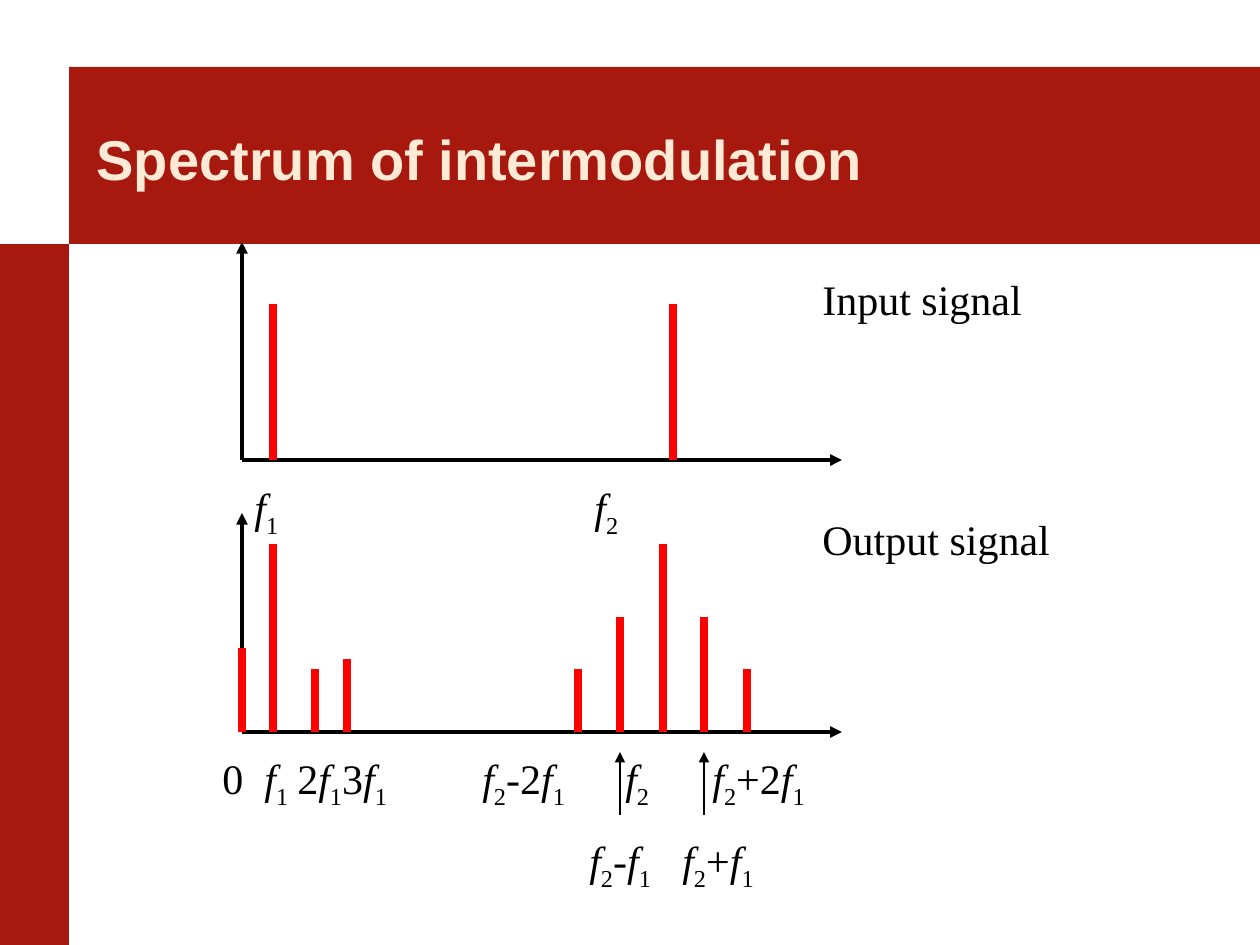
from itertools import groupby
from typing import NamedTuple

from lxml.etree import SubElement
from pptx import Presentation
from pptx.dml.color import RGBColor
from pptx.enum.shapes import MSO_CONNECTOR, MSO_SHAPE
from pptx.enum.text import MSO_ANCHOR, PP_ALIGN
from pptx.oxml.ns import qn
from pptx.util import Emu, Pt

PX_PER_INCH = 126
BAND, CREAM, BLACK, RED = "A7190E", "FFEBD5", "000000", "FF0000"
AXIS_X, AXIS_END = 242, 842


class Box(NamedTuple):
    left: int
    top: int
    width: int
    height: int


class Line(NamedTuple):
    text: str
    tabs: tuple[int, ...] = ()  # distances from the left of the text


class Label(NamedTuple):
    box: Box
    lines: tuple[Line, ...]


class Spectrum(NamedTuple):
    top: int
    base: int
    bars: dict[int, int]  # x position to top of the bar


BANDS = [Box(69, 67, 1191, 177), Box(0, 244, 69, 701)]

SPECTRA = [
    Spectrum(242, 460, {273: 304, 673: 304}),
    Spectrum(513, 732, {242: 648, 273: 544, 315: 669, 347: 659, 578: 669,
                        620: 617, 663: 544, 704: 617, 747: 669}),
]

# An underscore lowers the character that follows it
LABELS = [
    Label(Box(242, 471, 537, 63), (Line("f_1\tf_2", (340,)),)),
    Label(Box(210, 742, 694, 139), (
        Line("0\tf_1\t2f_13f_1\tf_2-2f_1\tf_2\tf_2+2f_1", (42, 75, 260, 403, 490)),
        Line("\tf_2-f_1\tf_2+f_1", (367, 460)),
    )),
    Label(Box(810, 262, 326, 64), (Line("Input signal"),)),
    Label(Box(810, 503, 326, 64), (Line("Output signal"),)),
]


def px(length: int) -> Emu:
    return Emu(round(length * 914400 / PX_PER_INCH))


def color(value: str) -> RGBColor:
    return RGBColor.from_string(value)


def draw_band(slide, box: Box) -> None:
    shape = slide.shapes.add_shape(MSO_SHAPE.RECTANGLE, *map(px, box))
    shape.shadow.inherit = False
    shape.fill.solid()
    shape.fill.fore_color.rgb = color(BAND)
    shape.line.fill.background()


def draw_line(slide, start: tuple[int, int], end: tuple[int, int],
              stroke: str, width: float, arrow: bool = False) -> None:
    connector = slide.shapes.add_connector(
        MSO_CONNECTOR.STRAIGHT, *map(px, (*start, *end)))
    connector.line.color.rgb = color(stroke)
    connector.line.width = Pt(width)
    if arrow:
        SubElement(connector.line._get_or_add_ln(), qn("a:tailEnd"), type="triangle")
    SubElement(connector._element.spPr, qn("a:effectLst"))


def draw_spectrum(slide, spectrum: Spectrum) -> None:
    origin = (AXIS_X, spectrum.base)
    draw_line(slide, origin, (AXIS_X, spectrum.top), BLACK, 2.25, arrow=True)
    draw_line(slide, origin, (AXIS_END, spectrum.base), BLACK, 2.25, arrow=True)
    for x, top in spectrum.bars.items():
        draw_line(slide, (x, top), (x, spectrum.base), RED, 4.5)


def add_formula(paragraph, text: str) -> None:
    """Write f in italics and lowered characters as subscripts."""
    styled = [(char, "sub" if before == "_" else "italic" if char == "f" else "plain")
              for before, char in zip(" " + text, text) if char != "_"]
    for style, pairs in groupby(styled, key=lambda pair: pair[1]):
        run = paragraph.add_run()
        run.text = "".join(char for char, _ in pairs)
        run.font.name = "Times New Roman"
        run.font.size = Pt(24)
        run.font.italic = style == "italic"
        run.font.color.rgb = color(BLACK)
        if style == "sub":
            run.font._element.set("baseline", "-25000")


def draw_label(slide, label: Label) -> None:
    frame = slide.shapes.add_textbox(*map(px, label.box)).text_frame
    frame.word_wrap = True
    frame.margin_top = px(11)
    for index, line in enumerate(label.lines):
        paragraph = frame.add_paragraph() if index else frame.paragraphs[0]
        if index:
            paragraph.space_before = Pt(14)
        if line.tabs:
            tab_list = SubElement(paragraph._p.get_or_add_pPr(), qn("a:tabLst"))
            for position in line.tabs:
                SubElement(tab_list, qn("a:tab"), pos=str(px(position)), algn="l")
        add_formula(paragraph, line.text)


def set_title(slide, text: str, box: Box) -> None:
    title = slide.shapes.title
    title.left, title.top, title.width, title.height = map(px, box)
    frame = title.text_frame
    frame.text = text
    frame.vertical_anchor = MSO_ANCHOR.MIDDLE
    paragraph = frame.paragraphs[0]
    paragraph.alignment = PP_ALIGN.LEFT
    font = paragraph.runs[0].font
    font.name, font.size, font.bold = "Arial", Pt(32), True
    font.color.rgb = color(CREAM)


def main() -> None:
    presentation = Presentation()
    presentation.slide_width, presentation.slide_height = px(1260), px(945)
    slide = presentation.slides.add_slide(presentation.slide_layouts[5])

    # Coloured bands, with the title brought in front of them
    for band in BANDS:
        draw_band(slide, band)
    set_title(slide, "Spectrum of intermodulation", Box(84, 87, 1160, 142))
    slide.shapes._spTree.append(slide.shapes.title._element)

    # Input and output spectra with their labels
    for spectrum in SPECTRA:
        draw_spectrum(slide, spectrum)
    for label in LABELS:
        draw_label(slide, label)

    # Pointers to the sum and difference products
    for x in (620, 704):
        draw_line(slide, (x, 815), (x, 752), BLACK, 0.75, arrow=True)

    presentation.save("out.pptx")


if __name__ == "__main__":
    main()
